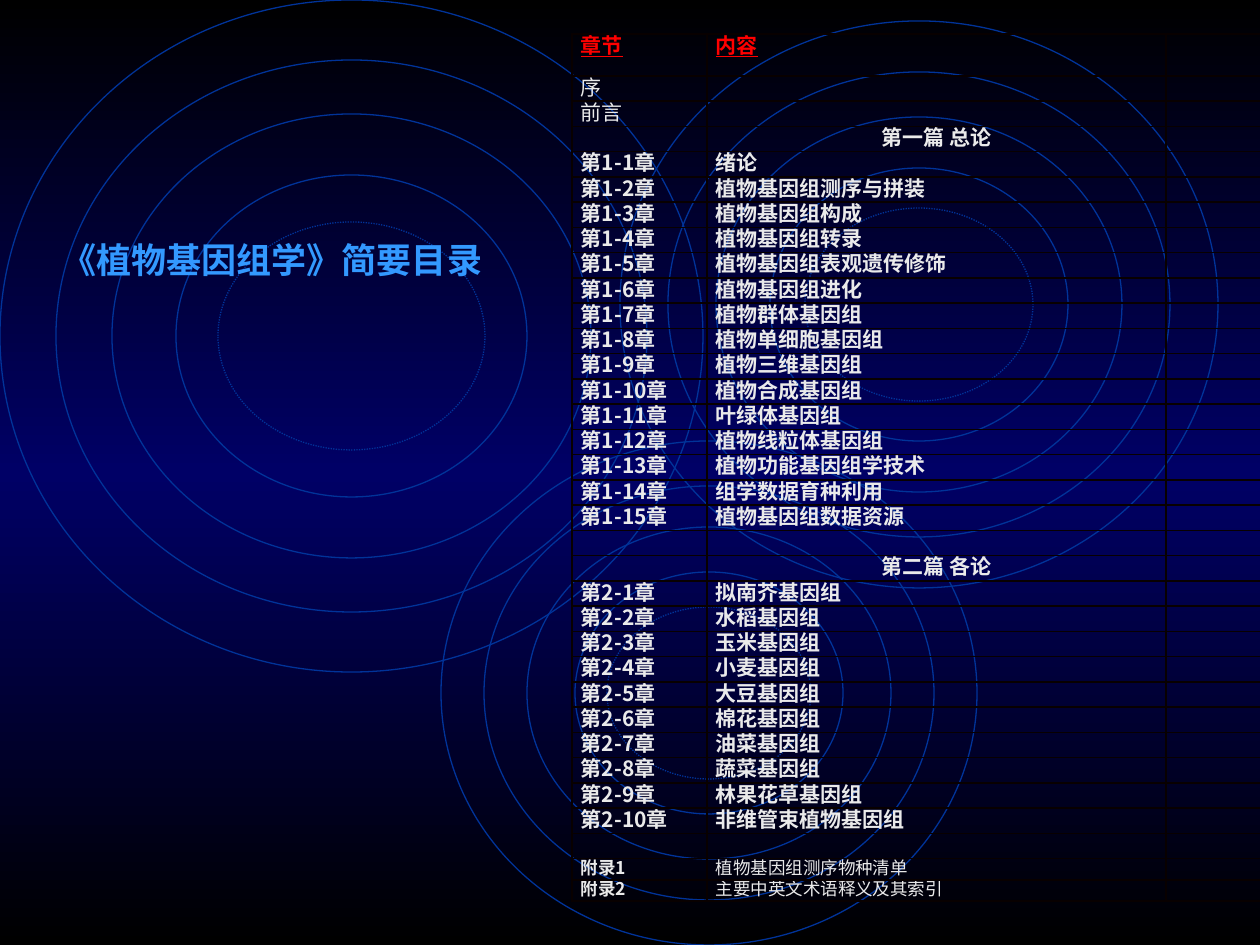
from copy import deepcopy

from lxml import etree
from pptx import Presentation
from pptx.dml.color import RGBColor
from pptx.enum.dml import MSO_LINE
from pptx.enum.shapes import MSO_SHAPE
from pptx.enum.text import MSO_AUTO_SIZE, PP_ALIGN
from pptx.oxml.ns import qn
from pptx.util import Pt

ELLIPSE = MSO_SHAPE.OVAL
DOTTED = MSO_LINE.ROUND_DOT
CENTER = PP_ALIGN.CENTER
LEFT = PP_ALIGN.LEFT
GROW = MSO_AUTO_SIZE.SHAPE_TO_FIT_TEXT

EMU_PER_PX = 914400 / 126
FONT = "Noto Sans CJK SC"
BLACK, NAVY, RING_BLUE = "000000", "000066", "003399"
TITLE_BLUE, RED, PALE, BORDER = "3399FF", "FF0000", "EAEAEA", "080000"

# Outer ellipse of each ripple, and the inset of each ring as a share of its size
RIPPLES = [(0, 0, 703, 672), (441, 441, 536, 504), (620, 21, 598, 567)]
RING_INSETS = [(0, 0), (0.08, 0.09), (0.16, 0.17), (0.25, 0.26), (0.31, 0.33)]

COLUMN_WIDTHS = [135, 459, 132]
LINE_FACTOR = 1.2
HEADER_HEIGHT = 42

GENERAL_CHAPTERS = [
    "绪论", "植物基因组测序与拼装", "植物基因组构成", "植物基因组转录",
    "植物基因组表观遗传修饰", "植物基因组进化", "植物群体基因组",
    "植物单细胞基因组", "植物三维基因组", "植物合成基因组", "叶绿体基因组",
    "植物线粒体基因组", "植物功能基因组学技术", "组学数据育种利用",
    "植物基因组数据资源",
]
SPECIES_CHAPTERS = [
    "拟南芥基因组", "水稻基因组", "玉米基因组", "小麦基因组", "大豆基因组",
    "棉花基因组", "油菜基因组", "蔬菜基因组", "林果花草基因组",
    "非维管束植物基因组",
]
APPENDICES = ["植物基因组测序物种清单", "主要中英文术语释义及其索引"]


def px(length):
    return round(length * EMU_PER_PX)


def color(value):
    return RGBColor.from_string(value)


def chapters(part, names):
    return [(f"第{part}-{number}章", name) for number, name in enumerate(names, 1)]


class SlideBuilder:
    def __init__(self, slide, font_name):
        self.slide = slide
        self.font_name = font_name

    def background(self, colors):
        """Fill the slide with a vertical gradient of evenly spaced colours."""
        fill = self.slide.background.fill
        fill.gradient()
        fill.gradient_angle = 270
        stop_list = self.slide.element.find(".//" + qn("a:gsLst"))
        while len(stop_list) < len(colors):
            stop_list.append(deepcopy(stop_list[0]))
        for index, (stop, value) in enumerate(zip(fill.gradient_stops, colors)):
            stop.position = index / (len(colors) - 1)
            stop.color.rgb = color(value)

    def ring(self, left, top, width, height, dotted):
        shape = self.slide.shapes.add_shape(
            ELLIPSE, px(left), px(top), px(width), px(height))
        shape.shadow.inherit = False
        shape.fill.background()
        shape.line.color.rgb = color(RING_BLUE)
        shape.line.width = Pt(0.75)
        if dotted:
            shape.line.dash_style = DOTTED

    def ripple(self, left, top, width, height):
        for x_share, y_share in RING_INSETS:
            x_inset, y_inset = round(width * x_share), round(height * y_share)
            self.ring(left + x_inset, top + y_inset,
                      width - 2 * x_inset, height - 2 * y_inset,
                      dotted=(x_share, y_share) == RING_INSETS[-1])

    def style(self, paragraph, size, value, bold=True, underline=False):
        font = paragraph.font
        font.size = Pt(size)
        font.bold = bold
        font.underline = underline
        font.color.rgb = color(value)
        font.name = self.font_name
        east_asian = etree.SubElement(font._element, qn("a:ea"))
        east_asian.set("typeface", self.font_name)

    def title(self, text, left, top, width, height):
        shape = self.slide.shapes.add_textbox(
            px(left), px(top), px(width), px(height))
        frame = shape.text_frame
        frame.word_wrap = True
        frame.auto_size = GROW
        frame.text = text
        self.style(frame.paragraphs[0], 20, TITLE_BLUE)

    def border(self, cell):
        properties = cell._tc.get_or_add_tcPr()
        for side in ("L", "R", "T", "B"):
            line = etree.SubElement(properties, qn(f"a:ln{side}"), w=str(Pt(1)))
            fill = etree.SubElement(line, qn("a:solidFill"))
            etree.SubElement(fill, qn("a:srgbClr"), val=BORDER)

    def cell(self, cell, text, size, value, bold, underline, alignment):
        self.border(cell)
        cell.fill.background()
        cell.margin_left = cell.margin_right = px(9)
        cell.margin_top = cell.margin_bottom = 0
        cell.text = text
        paragraph = cell.text_frame.paragraphs[0]
        paragraph.alignment = alignment
        paragraph.line_spacing = Pt(size * LINE_FACTOR)
        self.style(paragraph, size, value, bold, underline)

    def contents(self, rows, left, top):
        """Add the table; a row is (texts, size, colour, bold flags, header, alignment)."""
        frame = self.slide.shapes.add_table(
            len(rows), len(COLUMN_WIDTHS), px(left), px(top),
            px(sum(COLUMN_WIDTHS)), px(866))
        table = frame.table
        table.first_row = table.horz_banding = False
        for column, width in zip(table.columns, COLUMN_WIDTHS):
            column.width = px(width)
        for row, (texts, size, value, bolds, header, alignment) in zip(table.rows, rows):
            row.height = px(HEADER_HEIGHT) if header else Pt(size * LINE_FACTOR)
            for cell, text, bold in zip(row.cells, (*texts, ""), (*bolds, False)):
                self.cell(cell, text, size, value, bold, header, alignment)


def body_row(first="", second="", size=12, bolds=(True, True), alignment=LEFT):
    return (first, second), size, PALE, bolds, False, alignment


def contents_rows():
    rows = [(("章节", "内容"), 12, RED, (True, True), True, LEFT)]
    rows += [body_row(text, bolds=(False, False)) for text in ("序", "前言")]
    rows.append(body_row(second="第一篇 总论", alignment=CENTER))
    rows += [body_row(*chapter) for chapter in chapters(1, GENERAL_CHAPTERS)]
    rows.append(body_row())
    rows.append(body_row(second="第二篇 各论", alignment=CENTER))
    rows += [body_row(*chapter) for chapter in chapters(2, SPECIES_CHAPTERS)]
    rows.append(body_row())
    rows += [body_row(f"附录{number}", name, 10, (True, False))
             for number, name in enumerate(APPENDICES, 1)]
    return rows


def main():
    presentation = Presentation()
    presentation.slide_width = px(1260)
    presentation.slide_height = px(945)
    slide = presentation.slides.add_slide(presentation.slide_layouts[6])
    builder = SlideBuilder(slide, FONT)
    builder.background([BLACK, NAVY, BLACK])
    for outline in RIPPLES:
        builder.ripple(*outline)
    builder.title("《植物基因组学》简要目录", 49, 232, 701, 55)
    builder.contents(contents_rows(), 572, 34)
    presentation.save("out.pptx")


if __name__ == "__main__":
    main()
